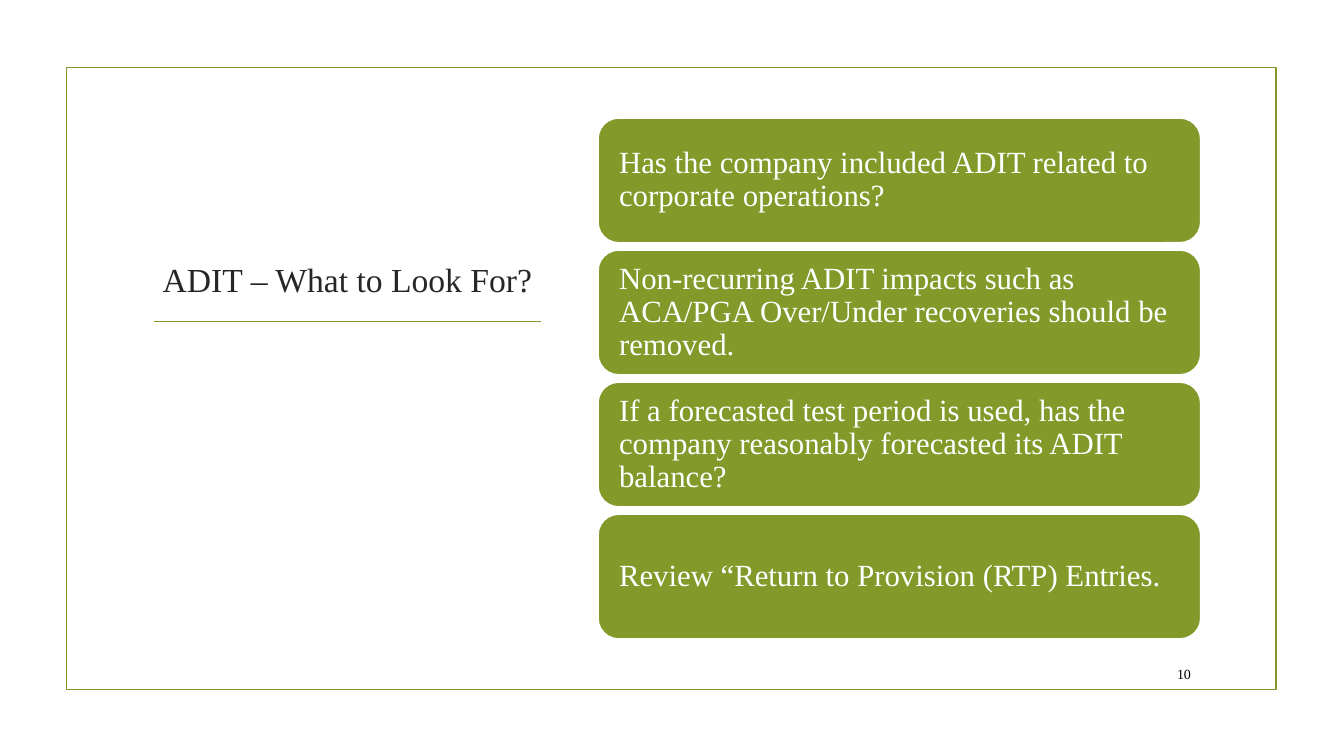
"""Build the slide on what to look for in ADIT."""
import pptx
import pptx.dml.color
import pptx.enum.shapes
import pptx.enum.text
import pptx.oxml.ns
import pptx.util
from pptx.util import Inches

TITLE = "ADIT – What to Look For?"
CHECKS = [
    "Has the company included ADIT related to corporate operations?",
    "Non-recurring ADIT impacts such as ACA/PGA Over/Under recoveries should be removed.",
    "If a forecasted test period is used, has the company reasonably forecasted its ADIT balance?",
    "Review “Return to Provision (RTP) Entries.",
]
PAGE_NUMBER = "10"
COLORS = {"olive": "83992A", "white": "FFFFFF", "title": "262626", "black": "000000"}
FONT = "Times New Roman"
CARD_LEFT, CARD_TOP, CARD_WIDTH, CARD_HEIGHT = 5.93, 1.17, 5.98, 1.24
CARD_PITCH = 1.31

ALIGN = pptx.enum.text.PP_ALIGN
ANCHOR = pptx.enum.text.MSO_ANCHOR
SHAPES = pptx.enum.shapes.MSO_SHAPE


def color(name):
    """Return the named colour."""
    return pptx.dml.color.RGBColor.from_string(COLORS[name])


def write(shape, text, size, fill, align=ALIGN.LEFT, anchor=ANCHOR.MIDDLE,
          spacing=1.0, inset=(0.1, 0.05)):
    """Put formatted text into a shape."""
    frame = shape.text_frame
    frame.word_wrap = True
    frame.auto_size = pptx.enum.text.MSO_AUTO_SIZE.NONE
    frame.vertical_anchor = anchor
    frame.margin_left = frame.margin_right = Inches(inset[0])
    frame.margin_top = frame.margin_bottom = Inches(inset[1])
    paragraph = frame.paragraphs[0]
    paragraph.alignment = align
    paragraph.line_spacing = spacing
    run = paragraph.add_run()
    run.text = text
    run.font.name = FONT
    run.font.size = pptx.util.Pt(size)
    run.font.color.rgb = color(fill)


def outline(shape, name):
    """Give a shape or connector its line."""
    shape.line.color.rgb = color(name)
    shape.line.width = pptx.util.Pt(1.25)


def add_box(slide, kind, left, top, width, height, line, fill=None):
    """Add a preset shape without shadow."""
    shape = slide.shapes.add_shape(
        kind, Inches(left), Inches(top), Inches(width), Inches(height))
    shape.shadow.inherit = False
    if fill:
        shape.fill.solid()
        shape.fill.fore_color.rgb = color(fill)
    else:
        shape.fill.background()
    outline(shape, line)
    return shape


def main():
    """Build and save the presentation."""
    presentation = pptx.Presentation()
    presentation.slide_width, presentation.slide_height = Inches(13.33), Inches(7.5)
    slide = presentation.slides.add_slide(presentation.slide_layouts.get_by_name("Title Only"))

    add_box(slide, SHAPES.RECTANGLE, 0.66, 0.67, 12, 6.17, "olive")
    rule = slide.shapes.add_connector(
        pptx.enum.shapes.MSO_CONNECTOR.STRAIGHT,
        Inches(1.53), Inches(3.19), Inches(5.37), Inches(3.19))
    outline(rule, "olive")
    rule._element.spPr.append(pptx.oxml.parse_xml(
        f"<a:effectLst {pptx.oxml.ns.nsdecls('a')}/>"))

    title = slide.shapes.title
    title.left, title.top = Inches(1.41), Inches(1.52)
    title.width, title.height = Inches(4.07), Inches(1.5)
    write(title, TITLE, 24, "title", align=ALIGN.CENTER, anchor=ANCHOR.BOTTOM)

    for index, check in enumerate(CHECKS):
        card = add_box(slide, SHAPES.ROUNDED_RECTANGLE, CARD_LEFT, CARD_TOP + index * CARD_PITCH,
                       CARD_WIDTH, CARD_HEIGHT, "white", fill="olive")
        write(card, check, 22, "white", spacing=0.9, inset=(0.15, 0.1))

    number = slide.shapes.add_textbox(Inches(11.32), Inches(6.53), Inches(0.59), Inches(0.31))
    write(number, PAGE_NUMBER, 10, "black", align=ALIGN.RIGHT)

    presentation.save("out.pptx")


if __name__ == "__main__":
    main()
